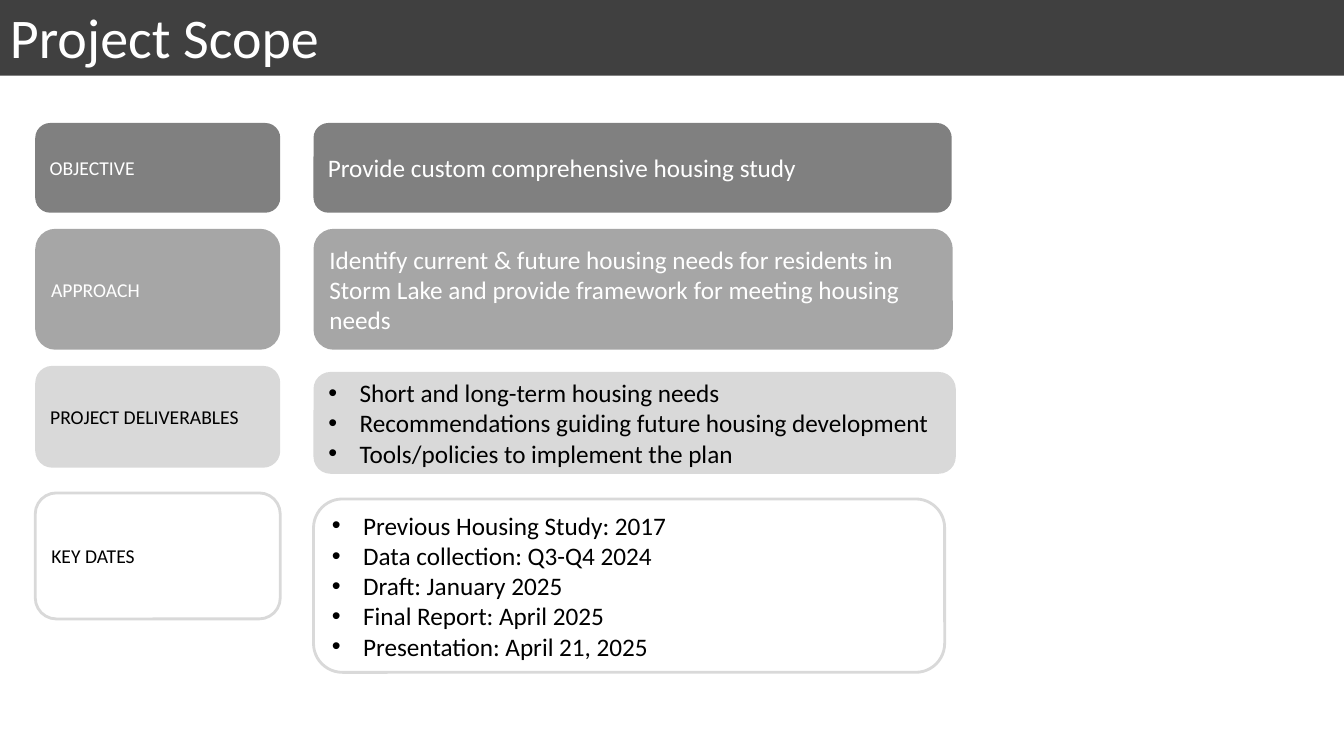
from lxml.etree import SubElement
from pptx import Presentation
from pptx.dml.color import RGBColor
from pptx.enum.shapes import MSO_SHAPE as SHAPE
from pptx.enum.text import MSO_ANCHOR as ANCHOR, PP_ALIGN as ALIGN
from pptx.oxml.ns import qn
from pptx.util import Inches, Pt

WHITE, BLACK, SILVER = "FFFFFF", "000000", "D9D9D9"
LABEL_LEFT, LABEL_WIDTH, DETAIL_LEFT = 0.35, 2.43, 3.11

ROWS = [
    dict(label="OBJECTIVE", fill="808080", color=WHITE, label_top=1.22, label_height=0.89,
         top=1.22, width=6.33, height=0.89,
         lines=["Provide custom comprehensive housing study"]),
    dict(label="APPROACH", fill="A6A6A6", color=WHITE, label_top=2.27, label_height=1.2,
         top=2.27, width=6.34, height=1.2,
         lines=["Identify current & future housing needs for residents in Storm Lake "
                "and provide framework for meeting housing needs"]),
    dict(label="PROJECT DELIVERABLES", fill=SILVER, color=BLACK, label_top=3.63, label_height=1.01,
         top=3.69, width=6.37, height=1.01,
         lines=["Short and long-term housing needs",
                "Recommendations guiding future housing development",
                "Tools/policies to implement the plan"]),
    dict(label="KEY DATES", fill=WHITE, color=BLACK, line=SILVER, label_top=4.89, label_height=1.25,
         top=4.95, width=6.26, height=1.72,
         lines=["Previous Housing Study: 2017",
                "Data collection: Q3-Q4 2024",
                "Draft: January 2025",
                "Final Report: April 2025",
                "Presentation: April 21, 2025"]),
]


def rgb(value):
    return RGBColor.from_string(value)


class Deck:
    font = "Calibri"
    indent = Inches(0.31)

    def __init__(self, prs):
        self.s = prs.slides.add_slide(prs.slide_layouts[6])

    def add_text(self, p, text, size=18, color=BLACK, bullet=False):
        p.alignment = ALIGN.LEFT
        if bullet:
            pPr = p._p.get_or_add_pPr()
            pPr.set("marL", str(self.indent))
            pPr.set("indent", str(-self.indent))
            SubElement(pPr, qn("a:buFont"), typeface="Arial")
            SubElement(pPr, qn("a:buChar"), char="•")
        r = p.add_run()
        r.text = text
        r.font.name = self.font
        r.font.size = Pt(size)
        r.font.color.rgb = rgb(color)

    def add_box(self, lines, left, top, width, height, fill, line=None,
                shape=SHAPE.ROUNDED_RECTANGLE, anchor=ANCHOR.MIDDLE, **style):
        sp = self.s.shapes.add_shape(shape, Inches(left), Inches(top),
                                     Inches(width), Inches(height))
        sp.shadow.inherit = False
        sp.fill.solid()
        sp.fill.fore_color.rgb = rgb(fill)
        if line:
            sp.line.color.rgb = rgb(line)
            sp.line.width = Pt(2)
        else:
            sp.line.fill.background()
        tf = sp.text_frame
        tf.word_wrap = True
        tf.vertical_anchor = anchor
        for i, text in enumerate(lines):
            p = tf.add_paragraph() if i else tf.paragraphs[0]
            self.add_text(p, text, bullet=len(lines) > 1, **style)


def main():
    prs = Presentation()
    prs.slide_width, prs.slide_height = Inches(13.33), Inches(7.5)
    deck = Deck(prs)
    deck.add_box(["Project Scope"], 0, -0.02, 13.33, 0.77, "404040",
                 shape=SHAPE.RECTANGLE, anchor=ANCHOR.TOP, size=40, color=WHITE)
    for row in ROWS:
        look = dict(fill=row["fill"], line=row.get("line"), color=row["color"])
        deck.add_box([row["label"]], LABEL_LEFT, row["label_top"], LABEL_WIDTH,
                     row["label_height"], size=14, **look)
        deck.add_box(row["lines"], DETAIL_LEFT, row["top"], row["width"], row["height"], **look)
    prs.save("out.pptx")


if __name__ == "__main__":
    main()
